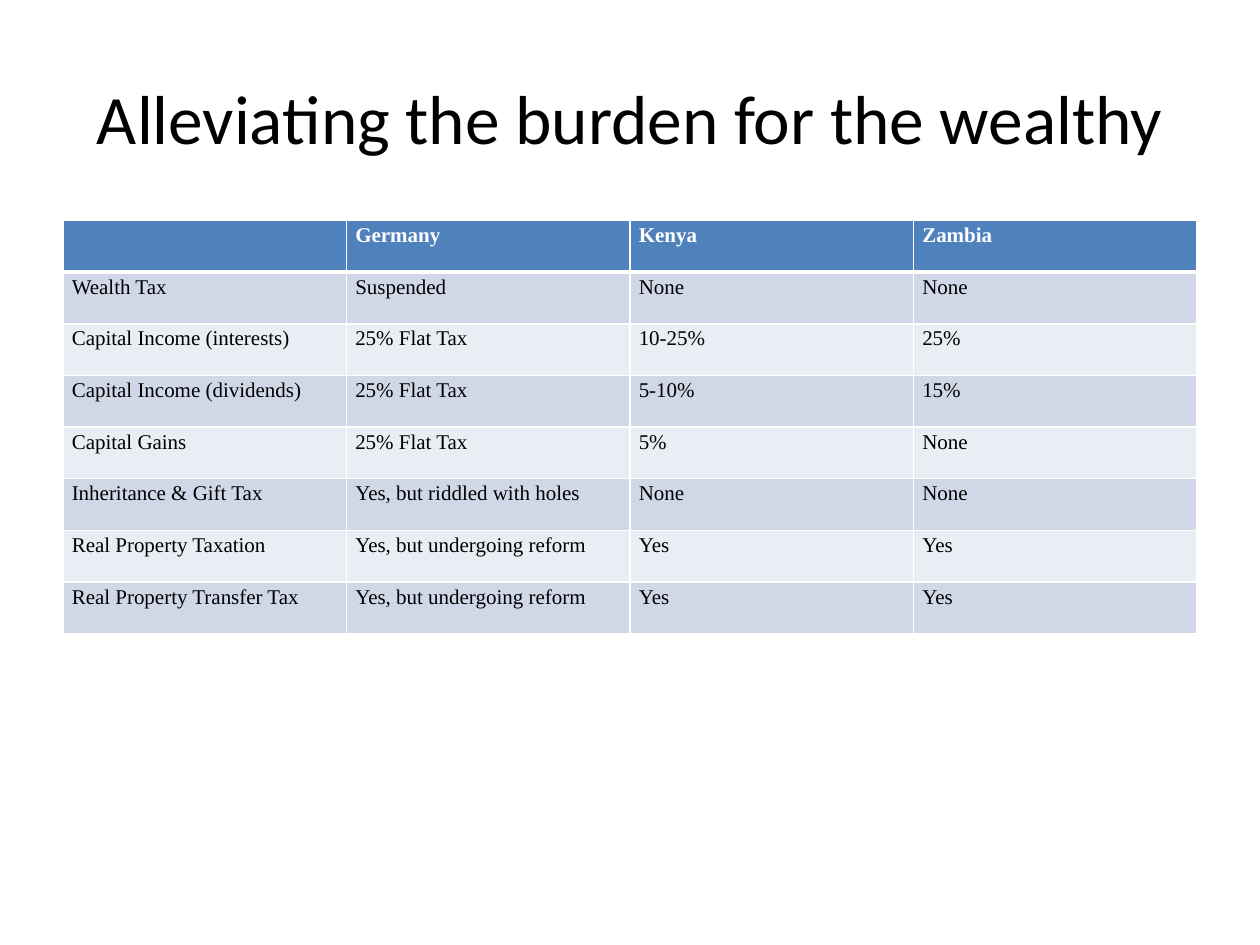
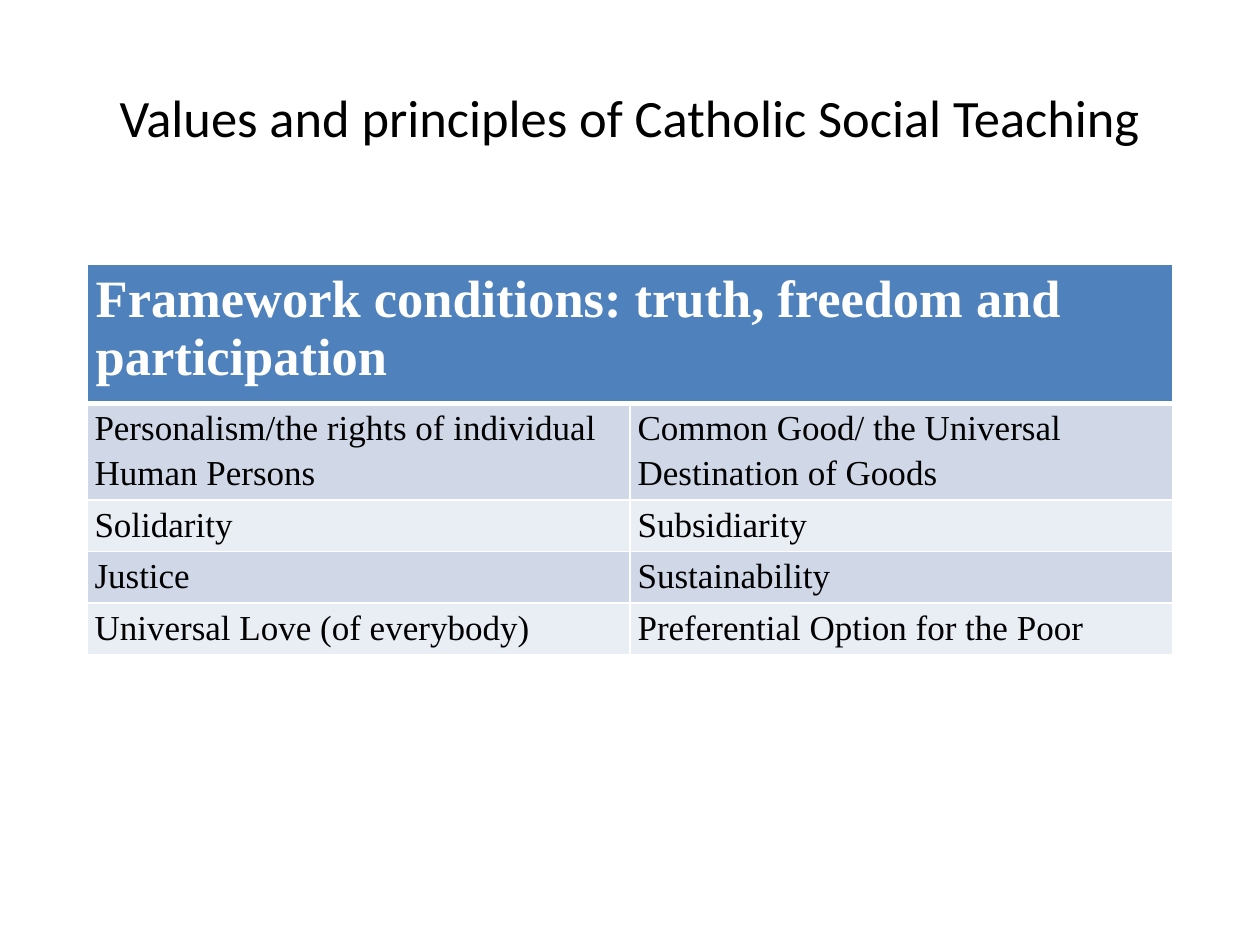
import pptx
import pptx.dml.color
import pptx.enum.text
import pptx.oxml
import pptx.oxml.ns
import pptx.util
from pptx.util import Inches

COLORS = {
    "title": "000000",
    "body": "000000",
    "header_text": "FFFFFF",
    "header": "4F81BD",
    "odd_row": "D0D8E8",
    "even_row": "E9EDF4",
    "grid": "FFFFFF",
}
TITLE_FONT = "Calibri"
TABLE_FONT = "Times New Roman"
TITLE_BOX = (0.5, 0.3, 9, 1.25)
ROW_HEIGHT = 0.41

TAX_ROWS = [
    ("", "Germany", "Kenya", "Zambia"),
    ("Wealth Tax", "Suspended", "None", "None"),
    ("Capital Income (interests)", "25% Flat Tax", "10-25%", "25%"),
    ("Capital Income (dividends)", "25% Flat Tax", "5-10%", "15%"),
    ("Capital Gains", "25% Flat Tax", "5%", "None"),
    ("Inheritance & Gift Tax", "Yes, but riddled with holes", "None", "None"),
    ("Real Property Taxation", "Yes, but undergoing reform", "Yes", "Yes"),
    ("Real Property Transfer Tax", "Yes, but undergoing reform", "Yes", "Yes"),
]
VALUE_ROWS = [
    ("Framework conditions: truth, freedom and participation", ""),
    ("Personalism/the rights of individual Human Persons",
     "Common Good/ the Universal Destination of Goods"),
    ("Solidarity", "Subsidiarity"),
    ("Justice", "Sustainability"),
    ("Universal Love (of everybody)", "Preferential Option for the Poor"),
]


def rgb(name):
    return pptx.dml.color.RGBColor.from_string(COLORS[name])


def style_runs(paragraph, font_name, size, color, bold=False):
    for run in paragraph.runs:
        run.font.name = font_name
        run.font.size = pptx.util.Pt(size)
        run.font.bold = bold
        run.font.color.rgb = rgb(color)


def add_title(slide, text, size):
    frame = slide.shapes.add_textbox(*map(Inches, TITLE_BOX)).text_frame
    frame.word_wrap = True
    frame.vertical_anchor = pptx.enum.text.MSO_ANCHOR.MIDDLE
    frame.text = text
    heading = frame.paragraphs[0]
    heading.alignment = pptx.enum.text.PP_ALIGN.CENTER
    style_runs(heading, TITLE_FONT, size, "title")


def set_borders(cell, row):
    """Draw thin grid lines, with a thick one between header and body."""
    widths = {"L": 1, "R": 1, "T": 3 if row == 1 else 1, "B": 3 if row == 0 else 1}
    properties = cell._tc.get_or_add_tcPr()
    for side, width in widths.items():
        properties.append(pptx.oxml.parse_xml(
            f'<a:ln{side} {pptx.oxml.ns.nsdecls("a")} w="{pptx.util.Pt(width)}">'
            f'<a:solidFill><a:srgbClr val="{COLORS["grid"]}"/></a:solidFill>'
            f'</a:ln{side}>'))


def style_cell(cell, row, size, inset, line_spacing):
    set_borders(cell, row)
    cell.fill.solid()
    fill = "header" if row == 0 else "odd_row" if row % 2 else "even_row"
    cell.fill.fore_color.rgb = rgb(fill)
    cell.margin_left = cell.margin_right = Inches(inset[0])
    cell.margin_top = cell.margin_bottom = Inches(inset[1])
    paragraph = cell.text_frame.paragraphs[0]
    paragraph.line_spacing = line_spacing
    style_runs(paragraph, TABLE_FONT, size,
               "header_text" if row == 0 else "body", bold=row == 0)


def add_banded_table(slide, left, top, width, rows, size, inset, header_height=ROW_HEIGHT):
    heights = [header_height] + [ROW_HEIGHT] * (len(rows) - 1)
    table = slide.shapes.add_table(
        len(rows), len(rows[0]), Inches(left), Inches(top),
        Inches(width), Inches(sum(heights))).table
    for column in table.columns:
        column.width = Inches(width / len(rows[0]))
    for row, (height, texts) in enumerate(zip(heights, rows)):
        table.rows[row].height = Inches(height)
        for column, text in enumerate(texts):
            cell = table.cell(row, column)
            cell.text_frame.text = text
            style_cell(cell, row, size, inset, 1.15)
    return table


def build_tax_slide(slide):
    add_title(slide, "Alleviating the burden for the wealthy", 39.6)
    add_banded_table(slide, 0.5, 1.75, 9, TAX_ROWS, size=12, inset=(0.07, 0))


def build_values_slide(slide):
    add_title(slide, "Values and principles of Catholic Social Teaching", 30)
    table = add_banded_table(slide, 0.69, 2.1, 8.62, VALUE_ROWS, size=20,
                             inset=(0.06, 0), header_height=0.3)
    framework = table.cell(0, 0)
    framework.merge(table.cell(0, 1))
    framework.margin_left = framework.margin_right = Inches(0.07)
    framework.margin_top = framework.margin_bottom = Inches(0.05)
    conditions = framework.text_frame.paragraphs[0]
    conditions.line_spacing = 1.0
    style_runs(conditions, TABLE_FONT, 30, "header_text", bold=True)


def main():
    deck = pptx.Presentation()
    deck.slide_width, deck.slide_height = Inches(10), Inches(7.5)
    for build in (build_tax_slide, build_values_slide):
        build(deck.slides.add_slide(deck.slide_layouts[6]))
    deck.save("out.pptx")


if __name__ == "__main__":
    main()
